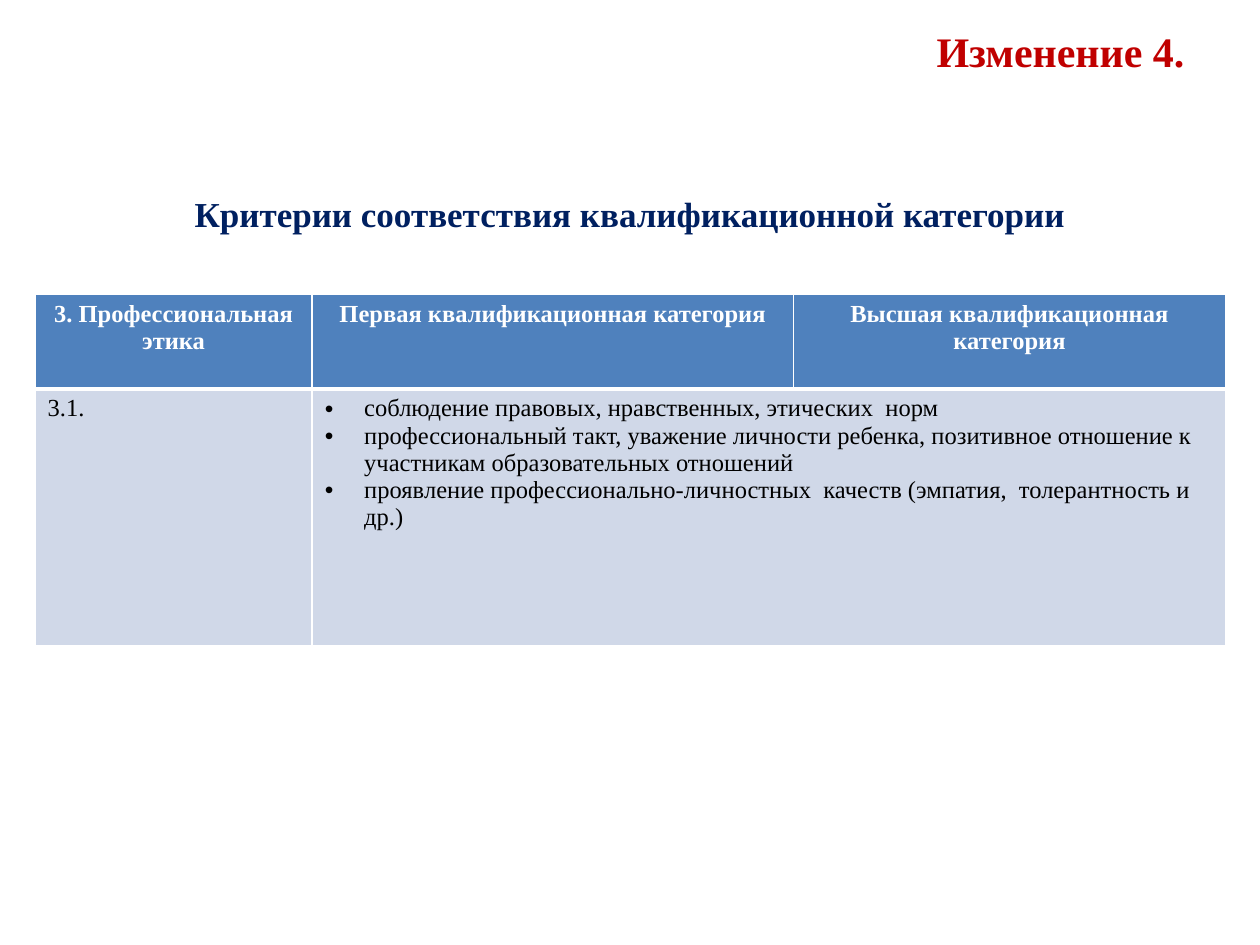
from lxml import etree
from pptx import Presentation
from pptx.dml.color import RGBColor
from pptx.enum import text
from pptx.oxml import ns
from pptx.util import Pt

LEFT, CENTER, RIGHT = text.PP_ALIGN.LEFT, text.PP_ALIGN.CENTER, text.PP_ALIGN.RIGHT


def colour(value):
    return RGBColor.from_string(value)


class SlideBuilder:
    font = "Times New Roman"
    white, black, red, navy = "FFFFFF", "000000", "C00000", "002060"
    header_fill, body_fill = "4F81BD", "D0D8E8"

    def __init__(self, page):
        self.page = page

    def add_span(self, para, words, size, ink, bold=False, align=LEFT):
        para.alignment = align
        span = para.add_run()
        span.text = words
        span.font.name = self.font
        span.font.size = Pt(size)
        span.font.bold = bold
        span.font.color.rgb = colour(ink)

    def text_box(self, bounds, words, size, ink, align, anchor, inset_top=3.6):
        box = self.page.shapes.add_textbox(*map(Pt, bounds))
        frame = box.text_frame
        frame.word_wrap = True
        frame.vertical_anchor = anchor
        frame.margin_top = Pt(inset_top)
        self.add_span(frame.paragraphs[0], words, size, ink, True, align)

    def table(self, left, top, widths, heights):
        bounds = map(Pt, (left, top, sum(widths), sum(heights)))
        grid = self.page.shapes.add_table(len(heights), len(widths), *bounds).table
        for column, width in zip(grid.columns, widths):
            column.width = Pt(width)
        for row, height in zip(grid.rows, heights):
            row.height = Pt(height)
        return grid

    def style_cell(self, cell, fill, top=1, bottom=1):
        cell.fill.solid()
        cell.fill.fore_color.rgb = colour(fill)
        properties = cell._tc.get_or_add_tcPr()
        edges = {"a:lnL": 1, "a:lnR": 1, "a:lnT": top, "a:lnB": bottom}
        for index, (tag, width) in enumerate(edges.items()):
            line = etree.Element(ns.qn(tag), w=str(Pt(width)))
            solid = etree.SubElement(line, ns.qn("a:solidFill"))
            etree.SubElement(solid, ns.qn("a:srgbClr"), val=self.white)
            properties.insert(index, line)

    def bullet_list(self, frame, items, size, indent):
        for index, words in enumerate(items):
            para = frame.add_paragraph() if index else frame.paragraphs[0]
            self.add_span(para, words, size, self.black)
            properties = para._p.get_or_add_pPr()
            properties.set("marL", str(Pt(indent)))
            properties.set("indent", str(-Pt(indent)))
            etree.SubElement(properties, ns.qn("a:buFont"), typeface="Arial")
            etree.SubElement(properties, ns.qn("a:buChar"), char="•")


def main():
    deck = Presentation()
    deck.slide_width, deck.slide_height = Pt(720), Pt(540)
    builder = SlideBuilder(deck.slides.add_slide(deck.slide_layouts[6]))

    # Title and subtitle
    builder.text_box((36, 9.4, 648, 39.6), "Изменение 4.", 24, builder.red,
                     RIGHT, text.MSO_ANCHOR.MIDDLE)
    builder.text_box((36, 49, 648, 433.4),
                     "Критерии соответствия квалификационной категории",
                     20, builder.navy, CENTER, text.MSO_ANCHOR.TOP, inset_top=61)

    # Criteria table
    grid = builder.table(20, 168.2, (158.4, 275, 247), (54, 146.6))
    headings = ("3. Профессиональная этика", "Первая квалификационная категория",
                "Высшая квалификационная категория")
    for column, heading in enumerate(headings):
        header, body = grid.cell(0, column), grid.cell(1, column)
        builder.style_cell(header, builder.header_fill, bottom=3)
        builder.style_cell(body, builder.body_fill, top=3)
        builder.add_span(header.text_frame.paragraphs[0], heading, 14,
                         builder.white, True, CENTER)

    # Criterion number and its requirements
    number, requirements = grid.cell(1, 0), grid.cell(1, 1)
    requirements.merge(grid.cell(1, 2))
    builder.add_span(number.text_frame.paragraphs[0], "3.1.", 14, builder.black)
    builder.bullet_list(requirements.text_frame, (
        "соблюдение правовых, нравственных, этических  норм",
        "профессиональный такт, уважение личности ребенка, позитивное отношение"
        " к участникам образовательных отношений",
        "проявление профессионально-личностных  качеств (эмпатия,  толерантность"
        " и др.)",
    ), 14, 22.5)

    deck.save("out.pptx")


if __name__ == "__main__":
    main()
